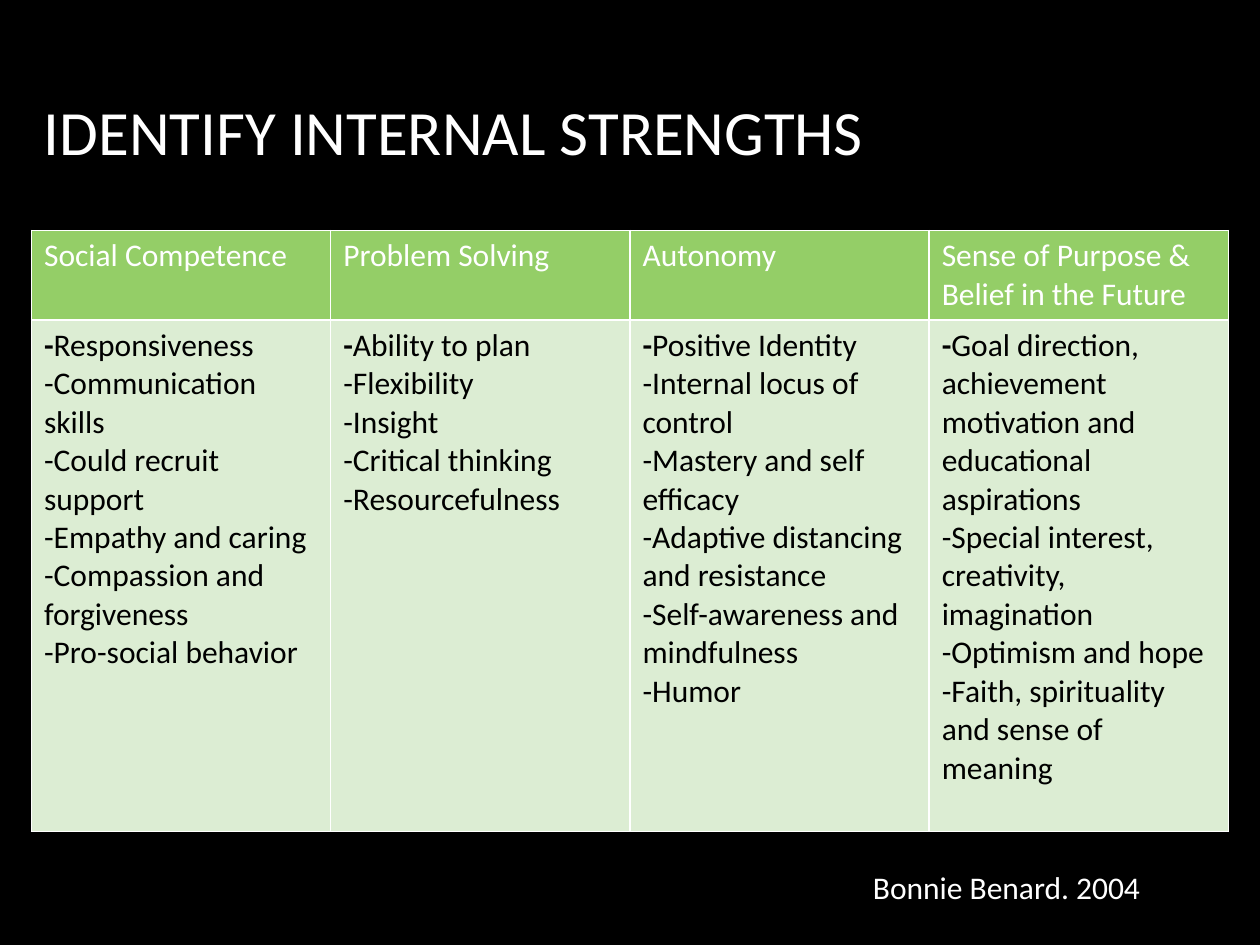
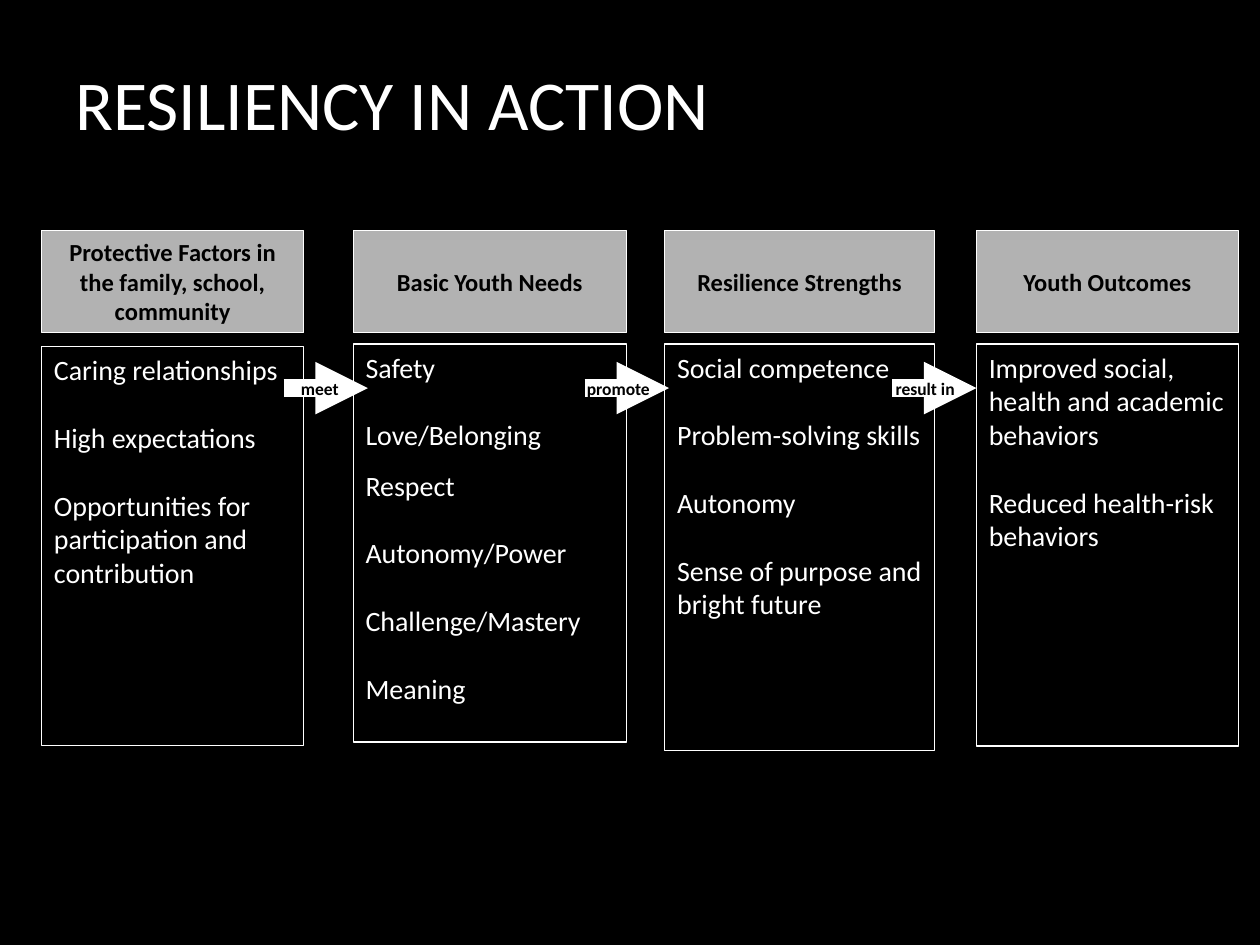
from lxml.etree import SubElement
from pptx import Presentation
from pptx.dml.color import RGBColor
from pptx.enum.shapes import MSO_CONNECTOR, MSO_SHAPE
from pptx.enum.text import MSO_ANCHOR, PP_ALIGN
from pptx.oxml.ns import qn
from pptx.util import Inches, Pt

BLACK = RGBColor(0x00, 0x00, 0x00)
WHITE = RGBColor(0xFF, 0xFF, 0xFF)
GRAY = RGBColor(0xB2, 0xB2, 0xB2)
GREEN = RGBColor(0x94, 0xCE, 0x67)
PALE_GREEN = RGBColor(0xDC, 0xED, 0xD3)
FONT = "Calibri"
GRID_COLUMNS, GRID_ROWS = 100, 75

STRENGTHS = {
    "Social Competence": [
        "Responsiveness", "Communication skills", "Could recruit support",
        "Empathy and caring", "Compassion and forgiveness", "Pro-social behavior"],
    "Problem Solving": [
        "Ability to plan", "Flexibility", "Insight", "Critical thinking", "Resourcefulness"],
    "Autonomy": [
        "Positive Identity", "Internal locus of control", "Mastery and self efficacy",
        "Adaptive distancing and resistance", "Self-awareness and mindfulness", "Humor"],
    "Sense of Purpose & Belief in the Future": [
        "Goal direction, achievement motivation and educational aspirations",
        "Special interest, creativity, imagination", "Optimism and hope",
        "Faith, spirituality and sense of meaning"],
}

# Heading, width, panel top, panel height, items
STAGES = [
    ("Protective Factors in the family, school, community", 20.8, 27.5, 31.7,
     ["Caring relationships", "High expectations",
      "Opportunities for participation and contribution"]),
    ("Basic Youth Needs", 21.7, 27.3, 31.6,
     ["Safety", "Love/Belonging", "Respect", "Autonomy/Power", "Challenge/Mastery", "Meaning"]),
    ("Resilience Strengths", 21.4, 27.3, 32.3,
     ["Social competence", "Problem-solving skills", "Autonomy",
      "Sense of purpose and bright future"]),
    ("Youth Outcomes", 20.8, 27.3, 31.9,
     ["Improved social, health and academic behaviors", "Reduced health-risk behaviors"]),
]

# Label, arrow start, label left, label width
LINKS = [("meet", 22.5, 22.9, 5.2), ("promote", 46.4, 45.6, 7), ("result in", 70.8, 70.1, 6.8)]


class Designer:
    """Holds the deck, its style and the current page."""

    def __init__(self):
        self.deck = Presentation()
        self.deck.slide_width, self.deck.slide_height = Inches(10), Inches(7.5)
        self.page = None

    def across(self, columns):
        return int(self.deck.slide_width * columns / GRID_COLUMNS)

    def down(self, rows):
        return int(self.deck.slide_height * rows / GRID_ROWS)

    def place(self, left, top, width, height):
        return self.across(left), self.down(top), self.across(width), self.down(height)

    def style(self, para, size, color, bold=False):
        for span in para.runs:
            span.font.name, span.font.size = FONT, Pt(size)
            span.font.color.rgb, span.font.bold = color, bold

    def set_lines(self, frame, lines, size, color=WHITE, bold=False, align=PP_ALIGN.LEFT):
        frame.text = "\n".join(lines)
        for para in frame.paragraphs:
            para.alignment = align
            self.style(para, size, color, bold)

    def add_page(self, title, left, top, size):
        self.page = self.deck.slides.add_slide(self.deck.slide_layouts[6])
        fill = self.page.background.fill
        fill.solid()
        fill.fore_color.rgb = BLACK
        frame = self.add_text(title, (left, top, 85, 15.9), size, wrap=True)
        frame.vertical_anchor = MSO_ANCHOR.MIDDLE

    def add_text(self, text, area, size, color=WHITE, bold=False, wrap=False):
        frame = self.page.shapes.add_textbox(*self.place(*area)).text_frame
        frame.word_wrap = wrap
        self.set_lines(frame, [text], size, color, bold)
        return frame

    def add_box(self, area, fill=None):
        box = self.page.shapes.add_shape(MSO_SHAPE.RECTANGLE, *self.place(*area))
        box.shadow.inherit = False
        if fill is None:
            box.fill.background()
        else:
            box.fill.solid()
            box.fill.fore_color.rgb = fill
        box.line.color.rgb, box.line.width = WHITE, Pt(0.75)
        box.text_frame.word_wrap = True
        box.text_frame.vertical_anchor = MSO_ANCHOR.TOP if fill is None else MSO_ANCHOR.MIDDLE
        return box.text_frame

    def add_arrow(self, left, top, length):
        start, end, level = self.across(left), self.across(left + length), self.down(top)
        arrow = self.page.shapes.add_connector(MSO_CONNECTOR.STRAIGHT, start, level, end, level)
        arrow.line.color.rgb, arrow.line.width = WHITE, Pt(10)
        properties = arrow.element.spPr
        SubElement(properties.find(qn("a:ln")), qn("a:tailEnd"), type="triangle")
        SubElement(properties, qn("a:effectLst"))

    def add_table(self, area, row_heights, columns):
        table = self.page.shapes.add_table(2, len(columns), *self.place(*area)).table
        table.horz_banding = False
        for row, height in zip(table.rows, row_heights):
            row.height = self.down(height)
        for index, (heading, items) in enumerate(columns.items()):
            top, body = table.cell(0, index), table.cell(1, index)
            self.set_lines(top.text_frame, [heading], 18)
            self.set_lines(body.text_frame, ["-" + item for item in items], 18, BLACK)
            # The first dash of each list is bold
            first = body.text_frame.paragraphs[0]
            first.runs[0].text = "-"
            first.add_run().text = items[0]
            self.style(first, 18, BLACK)
            first.runs[0].font.bold = True
            self.finish_cell(top, GREEN)
            self.finish_cell(body, PALE_GREEN)

    def finish_cell(self, cell, color):
        properties = cell._tc.get_or_add_tcPr()
        for side in ("a:lnL", "a:lnR", "a:lnT", "a:lnB"):
            edge = SubElement(properties, qn(side), w=str(Pt(1)))
            SubElement(SubElement(edge, qn("a:solidFill")), qn("a:srgbClr"), val=str(WHITE))
        cell.fill.solid()
        cell.fill.fore_color.rgb = color


def build_strengths(designer):
    designer.add_page("IDENTIFY INTERNAL STRENGTHS", 2.5, 2.4, 36)
    designer.add_table((2.5, 18.3, 95, 47.7), (7.1, 40.6), STRENGTHS)
    designer.add_text("Bonnie Benard. 2004", (68.3, 68.4, 25, 4), 18)


def build_action(designer):
    designer.add_page("RESILIENCY IN ACTION", 5, 0.2, 40)
    # Four stages at equal steps
    for index, (heading, width, top, height, items) in enumerate(STAGES):
        left = 3.3 + 24.73 * index
        header = designer.add_box((left, 18.3, width, 8.1), GRAY)
        designer.set_lines(header, [heading], 14, BLACK, True, PP_ALIGN.CENTER)
        panel = designer.add_box((left, top, width, height))
        designer.set_lines(panel, items, 16)
        for para in panel.paragraphs[1:]:
            para.space_before = Pt(9.5 if para.text == "Respect" else 19.5)
    # Labelled arrows between the stages
    for label, start, left, width in LINKS:
        designer.add_arrow(start, 30.8, 6.7)
        designer.add_text(label, (left, 29.5, width, 2.7), 10, BLACK, True)


def main():
    designer = Designer()
    build_strengths(designer)
    build_action(designer)
    designer.deck.save("out.pptx")


if __name__ == "__main__":
    main()
